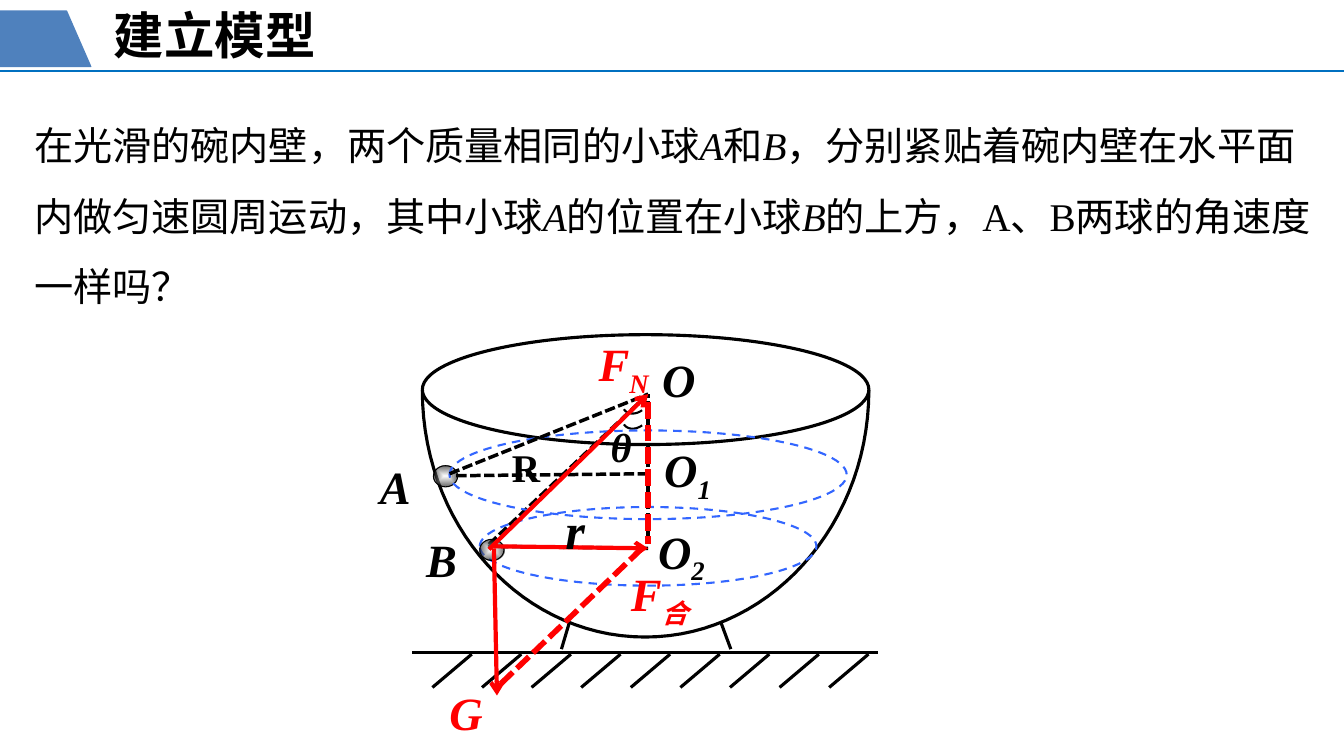
from lxml import etree
from pptx import Presentation, util as u
from pptx.dml.color import RGBColor
from pptx.enum import dml, shapes, text
from pptx.oxml import parse_xml
from pptx.oxml.ns import nsdecls, qn

COLORS = {"ink": "000000", "force": "FF0000", "orbit": "3366FF",
          "tab": "4F81BD", "rule": "0070C0", "light": "FFFFFF"}
DASH = dml.MSO_LINE.SQUARE_DOT


class Board:
    """Slide drawn on a grid whose columns and rows are a tenth of an inch."""
    CELL = u.Inches(0.1)
    COLS, ROWS = 133.33, 75
    FONT, TITLE_FONT = "Times New Roman", "Montserrat"

    def __init__(self, prs):
        prs.slide_width, prs.slide_height = self.grid(self.COLS, self.ROWS)
        self.s = prs.slides.add_slide(prs.slide_layouts[5])

    def grid(self, *cells):
        return [round(c * self.CELL) for c in cells]

    def color(self, name):
        return RGBColor.from_string(COLORS[name])

    def stroke(self, sp, color, width, dash=None):
        sp.line.color.rgb = self.color(color)
        sp.line.width = u.Pt(width)
        if dash:
            sp.line.dash_style = dash

    def font(self, p, size, color="ink", name=None, bold=True, italic=False):
        f = p.font
        f.name, f.size, f.bold, f.italic = name or self.FONT, u.Pt(size), bold, italic
        f.color.rgb = self.color(color)

    def title(self, words, *box):
        sp = self.s.shapes.title
        sp.left, sp.top, sp.width, sp.height = self.grid(*box)
        tf = sp.text_frame
        tf.text = words
        tf.auto_size = text.MSO_AUTO_SIZE.NONE
        tf.vertical_anchor = text.MSO_ANCHOR.TOP
        p = tf.paragraphs[0]
        p.alignment, p.line_spacing = text.PP_ALIGN.LEFT, 0.9
        self.font(p, 36, name=self.TITLE_FONT)

    def textbox(self, *box):
        tf = self.s.shapes.add_textbox(*self.grid(*box)).text_frame
        tf.word_wrap = True
        return tf.paragraphs[0]

    def body(self, runs, *box):
        p = self.textbox(*box)
        p.line_spacing = 1.5
        self.font(p, 28, bold=False)
        for i, words in enumerate(runs):
            r = p.add_run()
            r.text = words
            r.font.italic = i % 2 == 1

    def label(self, letter, x, y, w=6.3, h=5.9, sub="", size=33, color="ink", italic=True):
        p = self.textbox(x, y, w, h)
        self.font(p, size, color, italic=italic)
        p.add_run().text = letter
        if sub:
            r = p.add_run()
            r.text = sub
            r._r.get_or_add_rPr().set("baseline", "-25000")

    def line(self, x1, y1, x2, y2, color="ink", width=2.25, dash=None, arrow=False):
        sp = self.s.shapes.add_connector(shapes.MSO_CONNECTOR.STRAIGHT,
                                         *self.grid(x1, y1, x2, y2))
        self.stroke(sp, color, width, dash)
        if arrow:
            etree.SubElement(sp.line._get_or_add_ln(), qn("a:tailEnd"), type="arrow")
        etree.SubElement(sp._element.spPr, qn("a:effectLst"))

    def ellipse(self, *box, color="ink", width=2.25, dash=None):
        sp = self.s.shapes.add_shape(shapes.MSO_SHAPE.OVAL, *self.grid(*box))
        sp.shadow.inherit = False
        sp.fill.background()
        self.stroke(sp, color, width, dash)
        return sp

    def ball(self, letter, x, y):
        sp = self.ellipse(x, y, 2.4, 2.1, width=0.75)
        stops = "".join(
            f'<a:gs pos="{pos}"><a:srgbClr val="{COLORS[c]}"><a:alpha val="60000"/>'
            "</a:srgbClr></a:gs>" for pos, c in ((0, "light"), (100000, "ink")))
        spPr = sp._element.spPr
        spPr.replace(spPr.find(qn("a:noFill")), parse_xml(
            f'<a:gradFill {nsdecls("a")} rotWithShape="1"><a:gsLst>{stops}</a:gsLst>'
            '<a:path path="shape"><a:fillToRect l="50000" t="50000" r="50000" b="50000"/>'
            "</a:path></a:gradFill>"))
        self.label(letter, x - 6.3, y - 1.25)

    def outline(self, points, color, width, fill=None, close=False):
        pts = [self.grid(*pt) for pt in points]
        fb = self.s.shapes.build_freeform(*pts[0])
        fb.add_line_segments(pts[1:], close=close)
        sp = fb.convert_to_shape()
        sp.shadow.inherit = False
        if fill:
            sp.fill.solid()
            sp.fill.fore_color.rgb = self.color(fill)
        else:
            sp.fill.background()
        self.stroke(sp, color, width)

    def curve(self, *beziers, width=2.25, steps=30):
        points = []
        for a, b, c, d in beziers:
            for t in (i / steps for i in range(steps + 1)):
                v = 1 - t
                points.append([v**3 * a[k] + 3 * v * v * t * b[k] + 3 * v * t * t * c[k]
                               + t**3 * d[k] for k in (0, 1)])
        self.outline(points, "ink", width)

    def angle_mark(self, y):
        self.curve(((63.7, y), (63, y + 0.5), (62.2, y + 0.4), (61.9, y - 0.1)), width=1.5)


def main():
    prs = Presentation()
    b = Board(prs)

    # Radius from B
    b.line(64.3, 54.4, 48.4, 54.2, width=2.5, dash=DASH)
    b.line(48.5, 54, 64.3, 39.1, width=2.5, dash=DASH)

    # Heading and question
    b.title("建立模型", 10.3, 0.6, 43.5, 5.8)
    b.outline([(0, 1.1), (6.6, 1.1), (9, 6.6), (0, 6.6)], "tab", 1, fill="tab", close=True)
    b.line(0, 7, b.COLS, 7, "rule", 1.5)
    b.body(["在光滑的碗内壁，两个质量相同的小球", "A", "和", "B",
            "，分别紧贴着碗内壁在水平面内做匀速圆周运动，其中小球", "A",
            "的位置在小球", "B", "的上方，A、B两球的角速度一样吗？"],
           2.4, 9.2, 129.7, 22.2)

    # Bowl on the ground
    b.ellipse(41.9, 33.2, 44.3, 10.9)
    b.curve(((86.2, 38.7), (86.2, 52.2), (76.2, 63.2), (64, 63.2)),
            ((64, 63.2), (51.8, 63.2), (41.9, 52.3), (41.9, 38.7)))
    b.line(56.5, 61.7, 55.7, 64.4)
    b.line(71.5, 61.7, 72.5, 64.4)
    b.line(40.9, 64.7, 87.1, 64.7)
    for i in range(9):
        x = 46.8 + 4.92 * i
        b.line(x, 64.9, x - 3.9, 68.2)

    # Lower orbit, axis and angle
    b.ellipse(47.6, 50.3, 33.4, 7.8, color="orbit", width=1.5, dash=dml.MSO_LINE.DASH)
    b.label("θ", 59.6, 41.4, 9.2, size=29)
    b.angle_mark(42.2)
    b.line(64.3, 53.3, 64.3, 39.1, width=2.5, dash=DASH)
    b.label("O", 64.7, 34.4)
    b.label("O", 64.3, 51.4, 8.1, sub="2")

    # Balls and upper orbit
    b.ball("A", 43, 46.2)
    b.ball("B", 47.6, 53.5)
    b.ellipse(44.6, 42.7, 39.4, 8.8, color="orbit", width=1.5, dash=dml.MSO_LINE.DASH)
    b.line(64.3, 47, 44.9, 47.2, width=2.5, dash=DASH)
    b.label("O", 64.9, 43.3, 8.1, sub="1")
    b.line(44.6, 47, 64.3, 39.1, width=2.5, dash=DASH)
    b.angle_mark(40.7)

    # Forces on B
    for end in ((49, 54.2, 64.3, 54.4), (49, 54.4, 49.3, 69), (48.5, 54.5, 64.3, 39.1)):
        b.line(*end, color="force", width=3, arrow=True)
    for end in ((64.3, 39.9, 64.3, 54), (63.7, 54.4, 49.3, 68.2)):
        b.line(*end, color="force", width=4, dash=DASH)
    b.label("G", 43.6, 67.4, color="force")
    b.label("F", 58.4, 32.8, 10.9, sub="N", color="force")
    b.label("F", 61.6, 55.6, 10.9, sub="合", color="force")

    # Radius names
    b.label("R", 49.8, 43.5, 6, 5.7, size=28, italic=False)
    b.label("r", 55.1, 49, 6, 7.1, size=36)

    prs.save("out.pptx")


if __name__ == "__main__":
    main()
